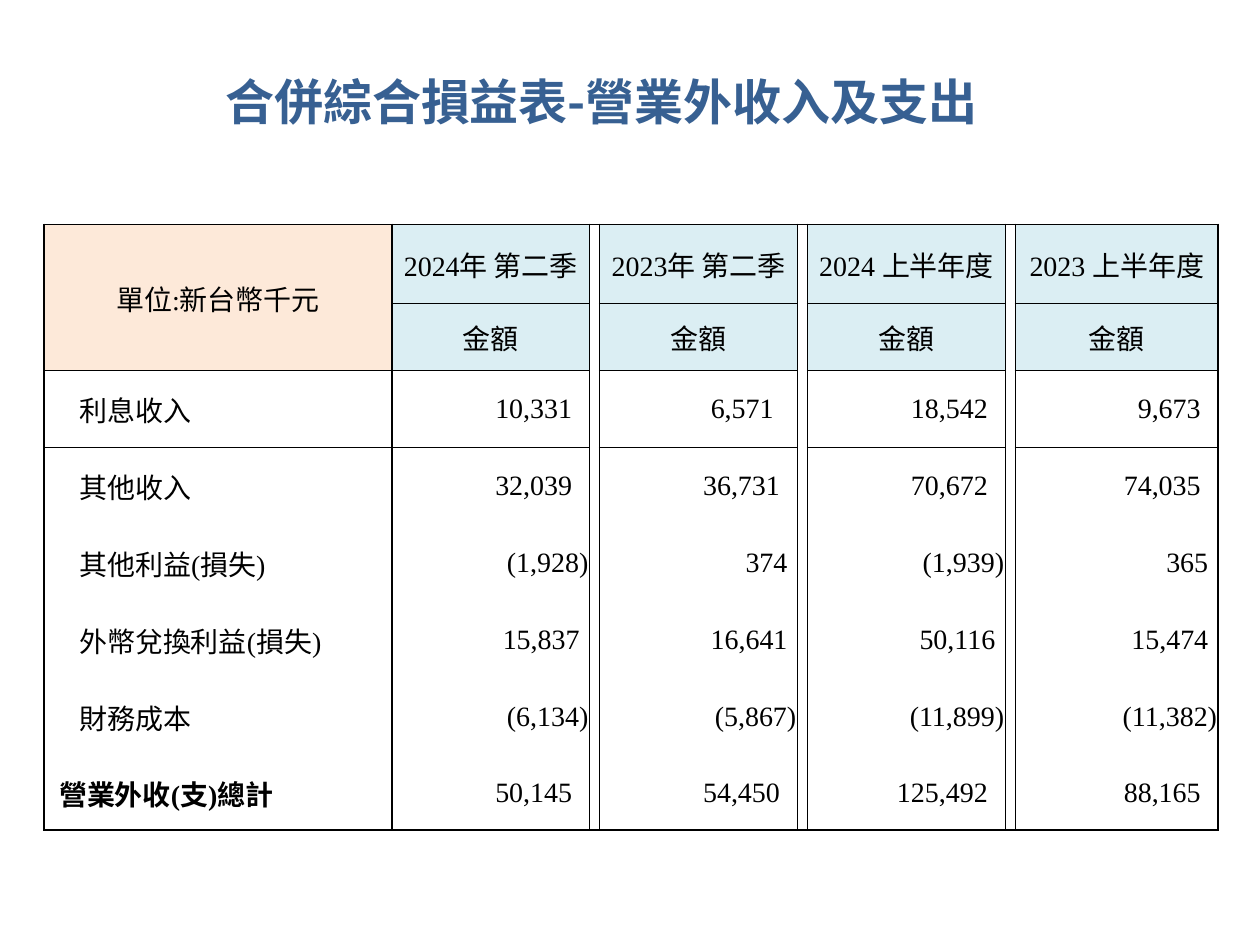
from lxml.etree import SubElement
from pptx import Presentation
from pptx.dml.color import RGBColor
from pptx.enum.text import MSO_ANCHOR, PP_ALIGN
from pptx.oxml.ns import qn
from pptx.util import Inches, Pt

NO_STYLE = "{2D5ABB26-0587-4C30-8999-92F81FD0307C}"
PERIODS = ["2024年 第二季", "2023年 第二季", "2024 上半年度", "2023 上半年度"]
ITEMS = [
    ("利息收入", ["10,331", "6,571", "18,542", "9,673"]),
    ("其他收入", ["32,039", "36,731", "70,672", "74,035"]),
    ("其他利益(損失)", ["(1,928)", "374", "(1,939)", "365"]),
    ("外幣兌換利益(損失)", ["15,837", "16,641", "50,116", "15,474"]),
    ("財務成本", ["(6,134)", "(5,867)", "(11,899)", "(11,382)"]),
    ("營業外收(支)總計", ["50,145", "54,450", "125,492", "88,165"]),
]
# Right insets, in grid units, that line digits up beside bracketed amounts
WIDE, NARROW, BRACKET = 1.4, 0.8, 0.1
ROW_INSETS = [WIDE, WIDE, NARROW, NARROW, NARROW, WIDE]


def rgb(value):
    return RGBColor.from_string(value)


def grid(units):
    """Length on a grid of 100 columns by 75 rows."""
    return Inches(units / 10)


def write(tf, text, size=16, font="Times New Roman", color="000000",
          bold=False, align=PP_ALIGN.LEFT):
    p = tf.paragraphs[0]
    p.alignment = align
    r = p.add_run()
    r.text = text
    r.font.size, r.font.name, r.font.bold = Pt(size), font, bold
    r.font.color.rgb = rgb(color)
    SubElement(r.font._element, qn("a:ea"), typeface="Noto Sans CJK SC")


class Deck:
    title_color, line_color = "376092", "000000"
    label_fill, period_fill = "FDE9D9", "DBEEF3"

    def __init__(self):
        self.prs = Presentation()
        self.prs.slide_width, self.prs.slide_height = grid(100), grid(75)
        self.s = self.prs.slides.add_slide(self.prs.slide_layouts[6])

    def title(self, text, *box):
        tf = self.s.shapes.add_textbox(*map(grid, box)).text_frame
        tf.word_wrap = True
        write(tf, text, size=28, font="Noto Sans CJK SC",
              color=self.title_color, bold=True)

    def table(self, left, top, cols, rows):
        frame = self.s.shapes.add_table(
            len(rows), len(cols), grid(left), grid(top),
            grid(sum(cols)), grid(sum(rows)))
        table = frame.table
        table.first_row = table.horz_banding = False
        table._tbl.tblPr.find(qn("a:tableStyleId")).text = NO_STYLE
        for col, width in zip(table.columns, cols):
            col.width = grid(width)
        for row, height in zip(table.rows, rows):
            row.height = grid(height)
        return table

    def cell(self, cell, text="", sides="LR", fill=None, left=0.1,
             right=0.1, **style):
        cell.margin_left, cell.margin_right = grid(left), grid(right)
        cell.margin_top, cell.margin_bottom = grid(0.1), 0
        cell.vertical_anchor = MSO_ANCHOR.MIDDLE
        for side in "LRTB":
            if side in sides:
                ln = SubElement(cell._tc.get_or_add_tcPr(),
                                qn(f"a:ln{side}"), w=str(Pt(1)))
                SubElement(SubElement(ln, qn("a:solidFill")),
                           qn("a:srgbClr"), val=self.line_color)
        if fill:
            cell.fill.solid()
            cell.fill.fore_color.rgb = rgb(fill)
        else:
            cell.fill.background()
        if text:
            write(cell.text_frame, text, **style)


def main():
    deck = Deck()
    deck.title("合併綜合損益表-營業外收入及支出", 16.9, 5.2, 81.1, 5.7)
    table = deck.table(3.5, 17.8, [27.6] + [15.7, 0.8] * 3 + [16.1],
                       [6.3, 5.3] + [6.1] * 5 + [6])
    last = len(ITEMS) + 1

    # Header: unit label over two rows, then each period
    table.cell(0, 0).merge(table.cell(1, 0))
    deck.cell(table.cell(0, 0), "單位:新台幣千元", "LRTB", deck.label_fill,
              align=PP_ALIGN.CENTER)
    deck.cell(table.cell(1, 0), sides="LRB", fill=deck.label_fill)
    for i, period in enumerate(PERIODS):
        for row, text in enumerate([period, "金額"]):
            deck.cell(table.cell(row, 2 * i + 1), text, "LRTB",
                      deck.period_fill, align=PP_ALIGN.CENTER)

    # Narrow gap columns between the periods
    for col in range(2, 2 * len(PERIODS), 2):
        for row in range(last + 1):
            edge = {0: "T", last: "B"}.get(row, "")
            deck.cell(table.cell(row, col), sides="LR" + edge, left=0, right=0)

    # Body: items and amounts, the total in the last row
    for row, ((label, amounts), inset) in enumerate(zip(ITEMS, ROW_INSETS), 2):
        total = row == last
        sides = "LR" + {2: "T", last: "B"}.get(row, "")
        deck.cell(table.cell(row, 0), label, sides,
                  left=1.2 if total else 2.8, bold=total)
        for i, amount in enumerate(amounts):
            right = BRACKET if amount.endswith(")") else inset
            if amount == "6,571":
                right = 1.9
            deck.cell(table.cell(row, 2 * i + 1), amount, sides,
                      right=right, align=PP_ALIGN.RIGHT)

    deck.prs.save("out.pptx")


if __name__ == "__main__":
    main()
